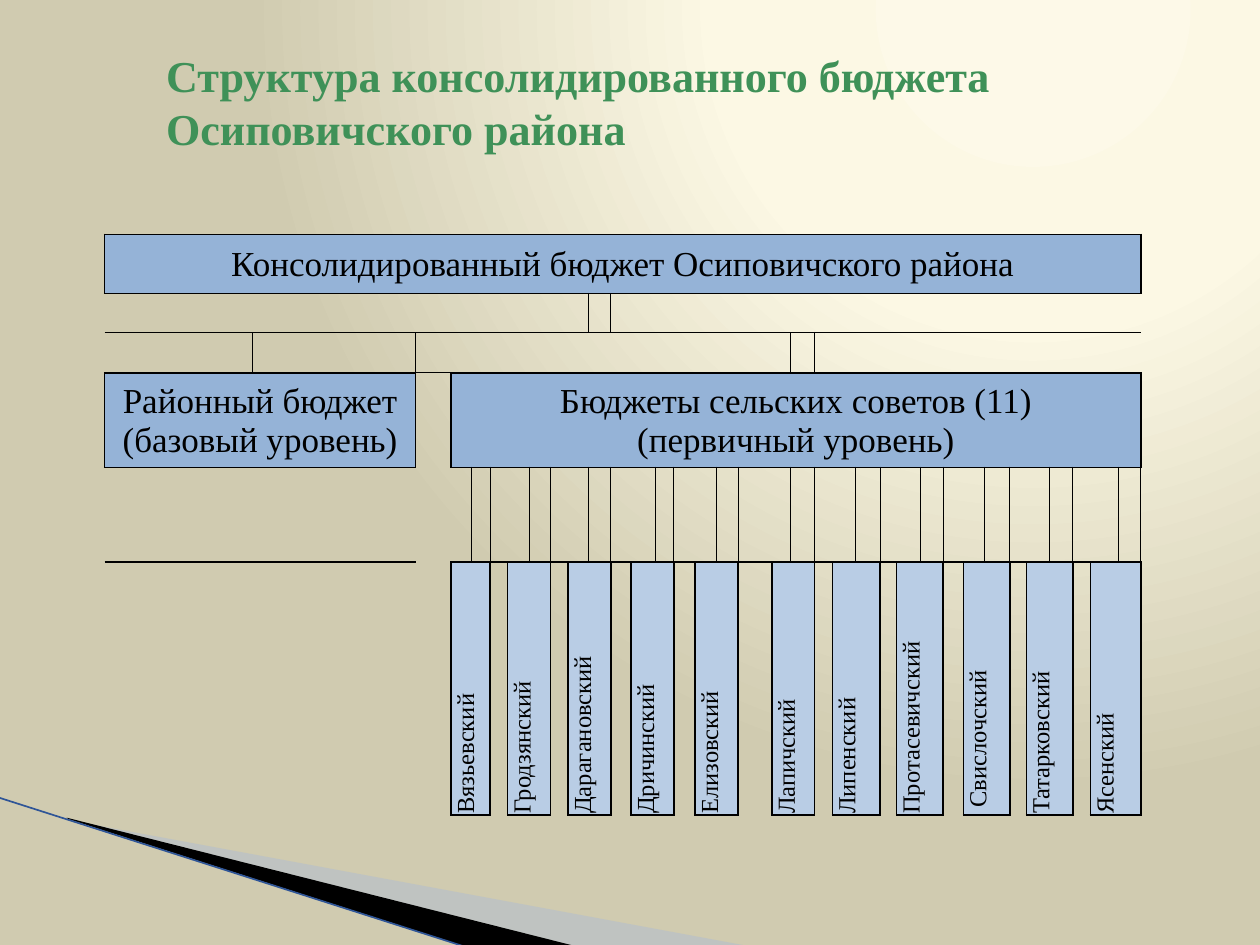
from collections import defaultdict
from dataclasses import dataclass

from lxml import etree
from pptx import Presentation
from pptx.dml.color import RGBColor
from pptx.enum.shapes import MSO_CONNECTOR as Connector
from pptx.enum.text import MSO_ANCHOR as Anchor, PP_ALIGN as Align
from pptx.oxml import parse_xml
from pptx.oxml.ns import nsdecls, qn
from pptx.util import Inches, Pt

COLUMN_WIDTHS = [
    1.17, 1.3, 0.28, 0.16, 0.15, 0.14, 0.17, 0.17, 0.14, 0.16, 0.18, 0.16,
    0.19, 0.15, 0.17, 0.17, 0.17, 0.13, 0.14, 0.15, 0.19, 0.14, 0.18, 0.2,
    0.13, 0.19, 0.18, 0.16, 0.17, 0.2, 0.13, 0.18, 0.19, 0.14, 0.22, 0.18,
]
ROW_HEIGHTS = [0.47, 0.31, 0.32, 0.75, 0.75, 2.01]
COUNCILS = {
    3: "Вязьевский", 6: "Гродзянский", 9: "Дарагановский", 12: "Дричинский",
    15: "Елизовский", 19: "Лапичский", 22: "Липенский", 25: "Протасевичский",
    28: " Свислочский", 31: "Татарковский", 34: "Ясенский",
}
NO_STYLE = "{2D5ABB26-0587-4C30-8999-92F81FD0307C}"
OPPOSITE = {"L": ("R", 0, -1), "R": ("L", 0, 1), "T": ("B", -1, 0), "B": ("T", 1, 0)}


@dataclass(frozen=True)
class Theme:
    font: str = "Times New Roman"
    title: str = "3F9158"
    ink: str = "000000"
    level: str = "95B3D7"
    council: str = "B9CDE5"
    ribbon: str = "A7B9DB"
    ribbon_line: str = "2F5597"
    gradient: tuple = ((0, "FDF9E8"), (40, "FCF8E4"), (100, "D0CBB0"))
    title_size: float = 25.2
    level_size: float = 20
    council_size: float = 14
    box_line: float = 1
    link_line: float = 0.5


class SlideBuilder:
    def __init__(self, slide, theme):
        self.slide = slide
        self.theme = theme
        self.table = None
        self.borders = defaultdict(dict)

    def background(self):
        stops = "".join(
            f'<a:gs pos="{position * 1000}"><a:srgbClr val="{color}"/></a:gs>'
            for position, color in self.theme.gradient
        )
        self.slide.element.cSld.insert(0, parse_xml(
            f'<p:bg {nsdecls("p", "a")}><p:bgPr><a:gradFill rotWithShape="1">'
            f'<a:gsLst>{stops}</a:gsLst><a:path path="circle">'
            '<a:fillToRect l="65000" t="0" r="0" b="98000"/></a:path>'
            '</a:gradFill><a:effectLst/></p:bgPr></p:bg>'
        ))

    def polygon(self, points, color, opacity=100):
        start, *others = [(Inches(x), Inches(y)) for x, y in points]
        builder = self.slide.shapes.build_freeform(*start)
        builder.add_line_segments(others, close=True)
        shape = builder.convert_to_shape()
        shape.shadow.inherit = False
        shape.line.fill.background()
        shape.fill.solid()
        shape.fill.fore_color.rgb = RGBColor.from_string(color)
        if opacity < 100:
            color_element = shape.element.spPr.find(".//" + qn("a:srgbClr"))
            alpha = etree.SubElement(color_element, qn("a:alpha"))
            alpha.set("val", str(opacity * 1000))

    def line(self, start, end, color, width):
        points = [Inches(value) for value in (*start, *end)]
        connector = self.slide.shapes.add_connector(Connector.STRAIGHT, *points)
        connector.line.color.rgb = RGBColor.from_string(color)
        connector.line.width = Pt(width)
        etree.SubElement(connector.element.spPr, qn("a:effectLst"))

    def add_run(self, paragraph, text, size, color, bold=False):
        run = paragraph.add_run()
        run.text = text
        run.font.name = self.theme.font
        run.font.size = Pt(size)
        run.font.bold = bold
        run.font.color.rgb = RGBColor.from_string(color)

    def title(self, text, left, top, width, height):
        shape = self.slide.shapes.add_textbox(
            Inches(left), Inches(top), Inches(width), Inches(height))
        frame = shape.text_frame
        frame.word_wrap = True
        frame.vertical_anchor = Anchor.MIDDLE
        self.add_run(frame.paragraphs[0], text, self.theme.title_size, self.theme.title, True)

    def grid(self, left, top, widths, heights):
        shape = self.slide.shapes.add_table(
            len(heights), len(widths), Inches(left), Inches(top),
            Inches(sum(widths)), Inches(sum(heights)))
        self.table = shape.table
        self.table.first_row = False
        self.table.horz_banding = False
        shape.element.find(".//" + qn("a:tableStyleId")).text = NO_STYLE
        for column, width in zip(self.table.columns, widths):
            column.width = Inches(width)
        for row, height in zip(self.table.rows, heights):
            row.height = Inches(height)
        for cell in self.table.iter_cells():
            cell.margin_left = cell.margin_right = cell.margin_top = Inches(0.01)
            cell.margin_bottom = 0
            cell.fill.background()
            paragraph = cell.text_frame.paragraphs[0]
            etree.SubElement(paragraph._p, qn("a:endParaRPr")).set("sz", "800")

    def border(self, row, column, side, width):
        self.borders[row, column][side] = width
        other_side, down, right = OPPOSITE[side]
        neighbour = (row + down, column + right)
        if 0 <= neighbour[0] < len(ROW_HEIGHTS) and 0 <= neighbour[1] < len(COLUMN_WIDTHS):
            self.borders[neighbour][other_side] = width

    def box(self, row, first, last, lines, color, size, vertical=False):
        cell = self.table.cell(row, first)
        cell.merge(self.table.cell(row, last))
        cell.fill.solid()
        cell.fill.fore_color.rgb = RGBColor.from_string(color)
        cell.vertical_anchor = Anchor.MIDDLE
        if vertical:
            cell._tc.get_or_add_tcPr().set("vert", "vert270")
        frame = cell.text_frame
        for index, text in enumerate(lines):
            paragraph = frame.add_paragraph() if index else frame.paragraphs[0]
            paragraph.alignment = Align.LEFT if vertical else Align.CENTER
            self.add_run(paragraph, text, size, self.theme.ink)
        for column in range(first, last + 1):
            for side in "TB":
                self.border(row, column, side, self.theme.box_line)
        self.border(row, first, "L", self.theme.box_line)
        self.border(row, last, "R", self.theme.box_line)
        self.borders[row, first]["R"] = self.theme.box_line

    def draw_borders(self):
        for (row, column), sides in self.borders.items():
            properties = self.table.cell(row, column)._tc.get_or_add_tcPr()
            ordered = [side for side in "LRTB" if side in sides]
            for index, side in enumerate(ordered):
                properties.insert(index, parse_xml(
                    f'<a:ln{side} {nsdecls("a")} w="{Pt(sides[side])}"><a:solidFill>'
                    f'<a:srgbClr val="{self.theme.ink}"/></a:solidFill></a:ln{side}>'
                ))


def main():
    presentation = Presentation()
    presentation.slide_width = Inches(10)
    presentation.slide_height = Inches(7.5)
    theme = Theme()
    builder = SlideBuilder(presentation.slides.add_slide(presentation.slide_layouts[6]), theme)

    builder.background()
    builder.polygon([(0.55, 6.51), (5.95, 7.51), (4.56, 7.51), (0.55, 6.5)], theme.ribbon, 40)
    builder.polygon([(0.53, 6.49), (4.57, 7.51), (3.72, 7.52), (0.54, 6.5)], theme.ink)
    builder.line((-0.01, 6.33), (3.71, 7.52), theme.ribbon_line, 0.95)

    builder.grid(0.83, 1.86, COLUMN_WIDTHS, ROW_HEIGHTS)
    last_column = len(COLUMN_WIDTHS) - 1
    levels = [
        (0, 0, last_column, ["Консолидированный бюджет Осиповичского района"]),
        (3, 0, 1, ["Районный бюджет", "(базовый уровень)"]),
        (3, 3, last_column, ["Бюджеты сельских советов (11)", "(первичный уровень)"]),
    ]
    for row, first, last, lines in levels:
        builder.box(row, first, last, lines, theme.level, theme.level_size)
    for first, name in COUNCILS.items():
        builder.box(5, first, first + 1, [name], theme.council, theme.council_size, True)
        builder.border(4, first, "R", theme.link_line)
    for row, column in [(1, 9), (2, 0), (2, 19)]:
        builder.border(row, column, "R", theme.link_line)
    for column in range(1, 20):
        builder.border(1, column, "B", theme.link_line)
    for row in (4, 5):
        builder.table.cell(row, 17).merge(builder.table.cell(row, 18))
    builder.draw_borders()

    builder.title("Структура консолидированного бюджета Осиповичского района", 1.22, 0.3, 8.11, 1.01)
    presentation.save("out.pptx")


if __name__ == "__main__":
    main()
